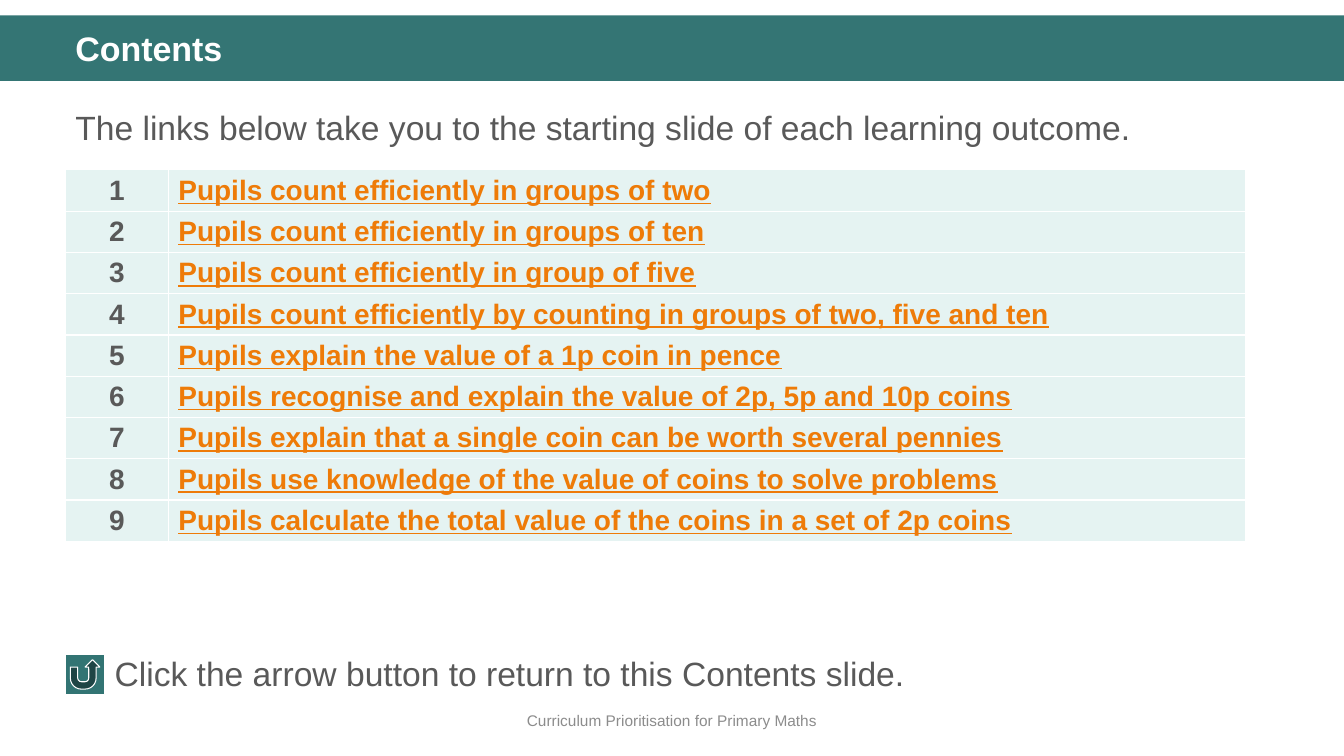
import pptx
import pptx.dml.color
import pptx.enum.shapes
import pptx.enum.text
import pptx.oxml
import pptx.oxml.ns
import pptx.util

Cm = pptx.util.Cm
Pt = pptx.util.Pt
Shape = pptx.enum.shapes.MSO_SHAPE
Align = pptx.enum.text.PP_ALIGN
Anchor = pptx.enum.text.MSO_ANCHOR

TEAL, MINT, ORANGE = "347574", "E5F3F2", "EE7B08"
WHITE, DARK, GREY = "FFFFFF", "595959", "8C8C8C"
WIDTH, LEFT = 33.87, 1.65

GOALS = [
    "Pupils count efficiently in groups of two",
    "Pupils count efficiently in groups of ten",
    "Pupils count efficiently in group of five",
    "Pupils count efficiently by counting in groups of two, five and ten",
    "Pupils explain the value of a 1p coin in pence",
    "Pupils recognise and explain the value of 2p, 5p and 10p coins",
    "Pupils explain that a single coin can be worth several pennies",
    "Pupils use knowledge of the value of coins to solve problems",
    "Pupils calculate the total value of the coins in a set of 2p coins",
]


def color(code):
    return pptx.dml.color.RGBColor.from_string(code)


class Deck:
    font = "Arial"

    def __init__(self, slide):
        self.slide = slide

    def add_run(self, frame, text, size, ink, bold=False, line=False,
                align=Align.LEFT, gap=1.0):
        para = frame.paragraphs[0]
        para.alignment = align
        para.line_spacing = gap
        run = para.add_run()
        run.text = text
        font = run.font
        font.name, font.size = self.font, Pt(size)
        font.bold, font.underline = bold, line
        font.color.rgb = color(ink)

    def text(self, box, text, size, ink, anchor=Anchor.TOP, **style):
        frame = self.slide.shapes.add_textbox(*map(Cm, box)).text_frame
        frame.word_wrap = True
        frame.vertical_anchor = anchor
        self.add_run(frame, text, size, ink, **style)

    def shape(self, kind, box, fill, edge=None):
        shape = self.slide.shapes.add_shape(kind, *map(Cm, box))
        shape.shadow.inherit = False
        shape.fill.solid()
        shape.fill.fore_color.rgb = color(fill)
        if edge:
            shape.line.color.rgb = color(edge)
            shape.line.width = Pt(0.75)
        else:
            shape.line.fill.background()

    def cell(self, cell, text, ink, **style):
        props = cell._tc.get_or_add_tcPr()
        for side in "LRTB":
            props.append(pptx.oxml.parse_xml(
                f'<a:ln{side} {pptx.oxml.ns.nsdecls("a")} w="{Pt(1)}">'
                f'<a:solidFill><a:srgbClr val="{WHITE}"/></a:solidFill>'
                f'</a:ln{side}>'))
        cell.fill.solid()
        cell.fill.fore_color.rgb = color(MINT)
        cell.margin_top = cell.margin_bottom = 0
        cell.vertical_anchor = Anchor.MIDDLE
        self.add_run(cell.text_frame, text, 20, ink, bold=True, **style)

    def table(self, left, top, widths, height, goals):
        table = self.slide.shapes.add_table(
            len(goals), len(widths), Cm(left), Cm(top),
            Cm(sum(widths)), Cm(height * len(goals))).table
        for col, width in zip(table.columns, widths):
            col.width = Cm(width)
        for i, goal in enumerate(goals):
            table.rows[i].height = Cm(height)
            self.cell(table.cell(i, 0), str(i + 1), DARK, align=Align.CENTER)
            self.cell(table.cell(i, 1), goal, ORANGE, line=True)


def main():
    prs = pptx.Presentation()
    prs.slide_width, prs.slide_height = Cm(WIDTH), Cm(19.05)
    deck = Deck(prs.slides.add_slide(prs.slide_layouts[6]))

    # Header band and footer
    deck.shape(Shape.RECTANGLE, (0, 0.39, WIDTH, 1.65), TEAL)
    deck.text((LEFT, 0.69, 30.94, 1.19), "Contents", 24.3, WHITE,
              bold=True, gap=0.9)
    deck.text((0, 17.65, WIDTH, 1.02),
              "Curriculum Prioritisation for Primary Maths", 11, GREY,
              anchor=Anchor.MIDDLE, align=Align.CENTER)

    # Learning outcomes
    deck.text((LEFT, 2.36, 30.94, 1.5),
              "The links below take you to the starting slide of each "
              "learning outcome.", 24, DARK, gap=1.2)
    deck.table(LEFT, 4.28, (2.59, 27.15), 1.04, GOALS)

    # Return button
    deck.shape(Shape.ACTION_BUTTON_RETURN, (LEFT, 16.5, 0.99, 0.99),
               "327473", WHITE)
    deck.text((2.64, 16.33, 28.75, 1.28),
              "Click the arrow button to return to this Contents slide.",
              24, DARK)

    prs.save("out.pptx")


if __name__ == "__main__":
    main()
